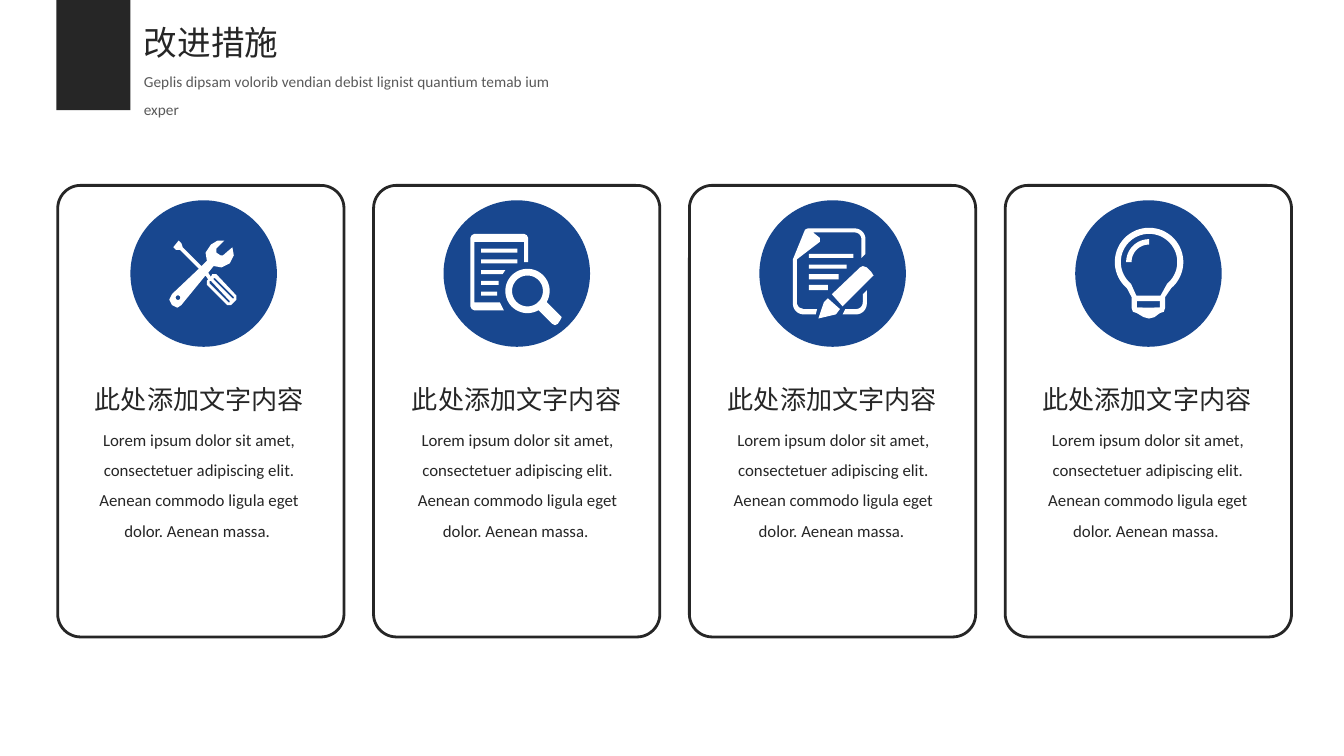
from dataclasses import dataclass
from math import cos, radians, sin

from lxml.etree import SubElement
from pptx import Presentation
from pptx.dml.color import RGBColor
from pptx.enum.shapes import MSO_SHAPE as SHAPE
from pptx.enum.text import MSO_ANCHOR as ANCHOR, MSO_AUTO_SIZE as AUTO, PP_ALIGN as ALIGN
from pptx.oxml.ns import qn
from pptx.util import Pt

PX = 9144


@dataclass(frozen=True)
class Theme:
    """Colours, fonts and type sizes of the slide."""
    ink: RGBColor = RGBColor(0x26, 0x26, 0x26)
    grey: RGBColor = RGBColor(0x59, 0x59, 0x59)
    blue: RGBColor = RGBColor(0x18, 0x47, 0x8F)
    white: RGBColor = RGBColor(0xFF, 0xFF, 0xFF)
    cjk: str = "Noto Sans CJK SC"
    latin: str = "Calibri"
    heading: str = "Arial"
    title_size: float = 18
    subtitle_size: float = 8.25
    heading_size: float = 14
    body_size: float = 9
    outline: float = 1.5


T = Theme()


def emu(*lengths):
    """Turn px lengths into EMU."""
    return [round(n * PX) for n in lengths]


def rect(x1, y1, x2, y2):
    """Give the corners of a rectangle."""
    return [(x1, y1), (x2, y1), (x2, y2), (x1, y2)]


def arc(cx, cy, radius, start, end, steps=48):
    """Give points along an arc, with angles in degrees clockwise from the right."""
    angles = [radians(start + (end - start) * i / steps) for i in range(steps + 1)]
    return [(cx + radius * cos(a), cy + radius * sin(a)) for a in angles]


TOOLS = [[
    [(79, 71), (64, 55), (61, 55), (60, 57), (58, 54), (62, 49), (68, 50), (74, 47),
     (77, 41), (76, 35), (69, 41), (67, 41), (64, 39), (64, 36), (70, 30), (65, 30),
     (60, 33), (56, 39), (57, 45), (53, 49), (39, 35), (38, 32), (36, 30), (32, 35),
     (34, 37), (37, 37), (51, 51), (33, 68), (31, 70), (29, 74), (31, 78), (35, 80),
     (38, 78), (56, 56), (58, 59), (57, 60), (57, 63), (72, 78), (75, 78), (79, 74)],
    arc(35.5, 72.5, 1.7, 0, 360),
    [(74, 76), (73, 76), (59, 62), (59, 60), (60, 60), (74, 75)],
    [(77, 73), (76, 73), (62, 59), (62, 58), (63, 58), (77, 72)],
]]
SEARCH = [[
    arc(62.5, 67.5, 16.5, 60, 390)
    + [(87, 86), (88, 87), (87, 89), (85, 92), (83, 93), (81, 92)],
    arc(62.5, 67.5, 11.5, 0, 360),
    rect(28, 36, 55, 39),
    rect(28, 44, 55, 47),
    [(28, 52), (46, 52), (44, 55), (28, 55)],
    rect(28, 60, 41, 63),
    rect(28, 68, 40, 71),
    [(60, 46), (60, 31), (23, 31), (23, 76), (42, 76), (45, 82), (23, 82), (21, 81),
     (20, 79), (20, 28), (21, 26), (23, 25), (60, 25), (62, 26), (63, 28), (63, 46)],
]]
EDIT = [[
    [(33, 81), (30, 80), (29, 79), (28, 77), (28, 44), (45, 31), (45, 28), (40, 24)]
    + arc(71, 29, 5, 270, 360, 8) + [(76, 43), (79, 40)] + arc(71, 29, 8, 360, 270, 8)
    + [(36, 21), (34, 22), (25, 44)] + arc(33, 77, 8, 180, 90, 8) + [(42, 85), (43, 81)],
    rect(37, 40, 70, 43),
    rect(37, 48, 65, 51),
    rect(37, 55, 59, 59),
    rect(37, 63, 51, 67),
    [(54, 70), (75, 50), (77, 49), (80, 50), (83, 53), (85, 56), (83, 58), (62, 79)],
    [(51, 73), (48, 76), (44, 88), (57, 85), (60, 81)],
    arc(72, 76, 5, 0, 90, 8) + [(64, 81), (62, 85)] + arc(72, 77, 8, 90, 0, 8)
    + [(80, 67), (77, 70)],
]]
BULB = [
    [arc(55, 46, 17, 180, 270) + arc(55, 46, 13, 270, 180),
     rect(44, 71, 65, 75),
     rect(46, 80, 63, 84)],
    [arc(55, 46, 25.5, 130, 410)
     + [(67, 72), (67, 80), (66, 83), (63, 84), (59, 87), (55, 88), (51, 87), (46, 84),
        (43, 83), (42, 80), (42, 72)],
     arc(55, 46, 21, 130, 410)
     + [(63, 72), (63, 80), (59, 80), (58, 83), (55, 84), (52, 83), (50, 80), (46, 80),
        (46, 72)]],
]

HEADING = "此处添加文字内容"
BODY = ("Lorem ipsum dolor sit amet, consectetuer adipiscing elit. "
        "Aenean commodo ligula eget dolor. Aenean massa. ")
CARDS = [(TOOLS, 54, 17, 16), (SEARCH, 52, 18, 18), (EDIT, 52, 18, 18), (BULB, 52, 17, 17)]


def write(s, text, size, font, color, align=ALIGN.LEFT, spacing=None, wrap=True):
    """Put one formatted paragraph into a text shape."""
    tf = s.text_frame
    tf.word_wrap = wrap
    tf.auto_size = AUTO.SHAPE_TO_FIT_TEXT
    tf.vertical_anchor = ANCHOR.TOP
    p = tf.paragraphs[0]
    p.alignment, p.line_spacing, p.space_before = align, spacing, Pt(0)
    r = p.add_run()
    r.text = text
    r.font.size, r.font.name = Pt(size), font
    r.font.color.rgb = color
    SubElement(r.font._element, qn("a:ea"), typeface=T.cjk)
    return p


def paint(s, fill=None, line=None):
    """Set the fill and outline of a shape, without shadow."""
    s.shadow.inherit = False
    if fill is None:
        s.fill.background()
    else:
        s.fill.solid()
        s.fill.fore_color.rgb = fill
    if line is None:
        s.line.fill.background()
    else:
        s.line.color.rgb = line
        s.line.width = Pt(T.outline)


def draw_icon(sp, x, y, parts):
    """Draw each part of an icon as one freeform, from the corner of its disc."""
    for contours in parts:
        points = [[emu(x + px, y + py) for px, py in c] for c in contours]
        fb = sp.build_freeform(*points[0][0], scale=1.0)
        fb.add_line_segments(points[0][1:], close=True)
        for contour in points[1:]:
            fb.move_to(*contour[0])
            fb.add_line_segments(contour[1:], close=True)
        paint(fb.convert_to_shape(), T.white)


def add_header(slide, x, y):
    """Place the dark tab, the title and the subtitle."""
    title, sub = slide.shapes.title, slide.placeholders[1]
    title.left, title.top, title.width, title.height = emu(x + 55, y + 11, 121, 40)
    write(title, "改进措施", T.title_size, T.cjk, T.ink, wrap=False)
    sub.left, sub.top, sub.width, sub.height = emu(x + 55, y + 42, 342, 50)
    p = write(sub, "Geplis dipsam volorib vendian debist lignist quantium temab ium exper",
              T.subtitle_size, T.latin, T.grey, spacing=1.5)
    pPr = p._p.get_or_add_pPr()
    pPr.set("marL", "0")
    pPr.set("indent", "0")
    SubElement(pPr, qn("a:buNone"))
    paint(slide.shapes.add_shape(SHAPE.RECTANGLE, *emu(x, y, 55, 82)), T.ink)


def add_card(slide, x, y, w, h, icon, disc_dx, heading_dx, body_dx):
    """Place one outlined card with its icon disc, heading and text."""
    sp = slide.shapes
    frame = sp.add_shape(SHAPE.ROUNDED_RECTANGLE, *emu(x, y, w, h))
    frame.adjustments[0] = 0.08
    paint(frame, line=T.ink)
    disc_x, disc_y = x + disc_dx, y + 11
    paint(sp.add_shape(SHAPE.OVAL, *emu(disc_x, disc_y, 109, 109)), T.blue)
    draw_icon(sp, disc_x, disc_y, icon)
    write(sp.add_textbox(*emu(x + body_dx, y + 169, 178, 101)), BODY,
          T.body_size, T.latin, T.ink, ALIGN.CENTER, 1.5)
    write(sp.add_textbox(*emu(x + heading_dx, y + 142, 177, 34)), HEADING,
          T.heading_size, T.heading, T.ink, ALIGN.CENTER, wrap=False)


def main():
    """Build the slide and save it."""
    prs = Presentation()
    prs.slide_width, prs.slide_height = emu(1000, 562.5)
    slide = prs.slides.add_slide(prs.slide_layouts[1])
    add_header(slide, 42, 0)
    for i, card in enumerate(CARDS):
        add_card(slide, 43 + 235 * i, 138, 213, 336, *card)
    prs.save("out.pptx")


if __name__ == "__main__":
    main()
